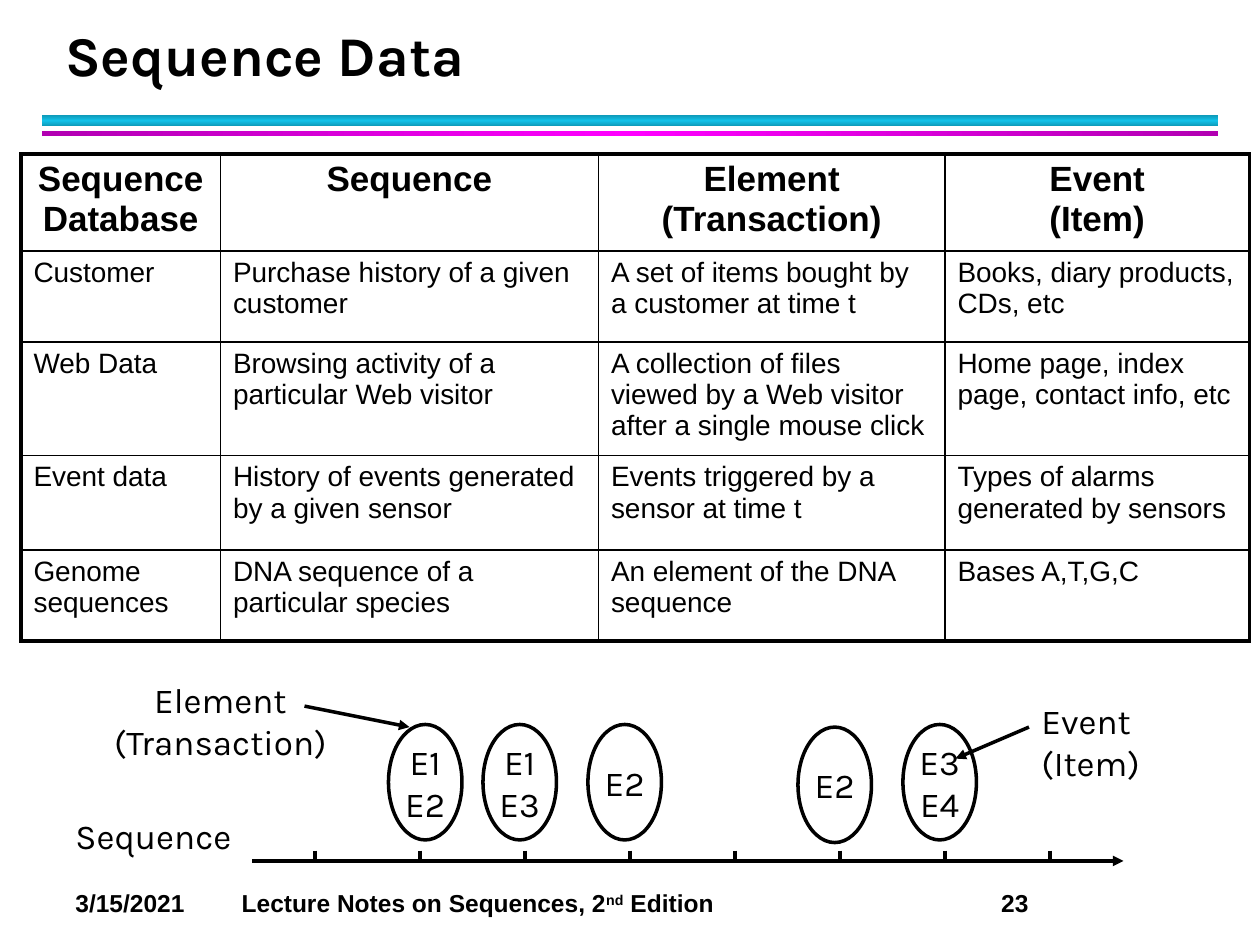
"""Builds the Sequence Data slide: a table of sequence databases above an event timeline."""
import copy
import dataclasses

import lxml.etree
import pptx
import pptx.dml.color
import pptx.enum.shapes
import pptx.enum.text
import pptx.oxml.ns
import pptx.util

Pt = pptx.util.Pt
qn = pptx.oxml.ns.qn
ALIGN = pptx.enum.text.PP_ALIGN
ANCHOR = pptx.enum.text.MSO_ANCHOR
SHAPE = pptx.enum.shapes.MSO_SHAPE


@dataclasses.dataclass(frozen=True)
class Theme:
    ink: str = "000000"
    blue: tuple = ("0E9BBA", "12C2E9", "0E9BBA")
    magenta: tuple = ("B200B2", "FF00FF", "B200B2")
    heading: str = "Karla"
    body: str = "Arial"
    title: float = 32
    label: float = 20
    cell: float = 16
    footer: float = 14
    stroke: float = 2
    frame: float = 2.25
    rule: float = 1


THEME = Theme()

TITLE = "Sequence Data"
HEADER = ["Sequence Database", "Sequence", "Element (Transaction)", "Event\v(Item)"]
DATABASES = [
    ["Customer", "Purchase history of a given customer",
     "A set of items bought by a customer at time t", "Books, diary products, CDs, etc"],
    ["Web Data", "Browsing activity of a particular Web visitor",
     "A collection of files viewed by a Web visitor after a single mouse click",
     "Home page, index page, contact info, etc"],
    ["Event data", "History of events generated by a given sensor",
     "Events triggered by a sensor at time t", "Types of alarms generated by sensors"],
    ["Genome sequences", "DNA sequence of a particular species",
     "An element of the DNA sequence", "Bases A,T,G,C"],
]
COLUMN_WIDTHS = [114, 216, 198, 174]
ROW_HEIGHTS = [55.5, 52, 64.5, 54, 52]
ELEMENTS = [("E1\vE2", 222, 414), ("E1\vE3", 276, 414), ("E2", 336, 414),
            ("E3\vE4", 516, 414), ("E2", 456, 415.5)]
LABELS = [("Sequence", (36, 462, 120, 31), ALIGN.LEFT),
          ("Element (Transaction)", (54, 384, 144, 55.5), ALIGN.CENTER),
          ("Event\v(Item)", (588, 396, 78, 55.5), ALIGN.LEFT)]
POINTERS = [((174, 403.5), (234, 415.5)), ((588, 415.5), (546, 433.5))]
AXIS_Y, AXIS_START, AXIS_END = 492, 144, 642
TICK_START, TICK_GAP, TICK_COUNT, TICK_HEIGHT = 180, 60, 8, 6
BANDS = [(66, 6, THEME.blue, 90), (75, 3, THEME.magenta, 0)]
FOOTER = ["3/15/2021\tLecture Notes on Sequences, 2", "nd", " Edition\t23"]
FOOTER_TABS = [95, 529]


def rgb(value):
    return pptx.dml.color.RGBColor.from_string(value)


def box(left, top, width, height):
    return Pt(left), Pt(top), Pt(width), Pt(height)


def write(frame, text, size=THEME.label, font=THEME.heading, bold=False,
          align=ALIGN.LEFT, anchor=None, wrap=True):
    """Fill the frame with one paragraph; a list gives separate runs."""
    if wrap is not None:
        frame.word_wrap = wrap
    if anchor is not None:
        frame.vertical_anchor = anchor
    paragraph = frame.paragraphs[0]
    paragraph.alignment = align
    if isinstance(text, str):
        paragraph.text = text
    else:
        for part in text:
            paragraph.add_run().text = part
    for run in paragraph.runs:
        run.font.name = font
        run.font.size = Pt(size)
        run.font.bold = bold
        run.font.color.rgb = rgb(THEME.ink)
    return paragraph


def draw_line(slide, start, end, arrow=False):
    line = slide.shapes.add_connector(
        pptx.enum.shapes.MSO_CONNECTOR.STRAIGHT, *box(*start, *end))
    line.line.color.rgb = rgb(THEME.ink)
    line.line.width = Pt(THEME.stroke)
    if arrow:
        lxml.etree.SubElement(line.line._get_or_add_ln(), qn("a:tailEnd"), type="triangle")
    lxml.etree.SubElement(line._element.spPr, qn("a:effectLst"))


def add_band(slide, top, height, colors, angle):
    band = slide.shapes.add_shape(SHAPE.RECTANGLE, *box(24, top, 672, height))
    band.shadow.inherit = False
    band.line.fill.background()
    band.fill.gradient()
    band.fill.gradient_angle = angle
    stop_list = band._element.spPr.find(".//" + qn("a:gsLst"))
    stop_list.append(copy.deepcopy(stop_list[0]))
    for index, (stop, color) in enumerate(zip(band.fill.gradient_stops, colors)):
        stop.position = index / 2
        stop.color.rgb = rgb(color)


def border(cell, widths):
    properties = cell._tc.get_or_add_tcPr()
    for side, width in widths.items():
        edge = lxml.etree.SubElement(properties, qn("a:ln" + side), w=str(Pt(width)))
        fill = lxml.etree.SubElement(edge, qn("a:solidFill"))
        lxml.etree.SubElement(fill, qn("a:srgbClr"), val=THEME.ink)


def add_databases(slide):
    rows = [HEADER] + DATABASES
    table = slide.shapes.add_table(
        len(rows), len(HEADER),
        *box(12, 88, sum(COLUMN_WIDTHS), sum(ROW_HEIGHTS))).table
    table.first_row = table.horz_banding = False
    for column, width in zip(table.columns, COLUMN_WIDTHS):
        column.width = Pt(width)
    last_row, last_column = len(rows) - 1, len(HEADER) - 1
    for r, (row, height) in enumerate(zip(rows, ROW_HEIGHTS)):
        table.rows[r].height = Pt(height)
        for c, entry in enumerate(row):
            cell = table.cell(r, c)
            outer = {"L": c == 0, "R": c == last_column, "T": r == 0, "B": r == last_row}
            border(cell, {side: THEME.frame if edge else THEME.rule
                          for side, edge in outer.items()})
            cell.fill.background()
            paragraph = write(cell.text_frame, entry, font=THEME.body, bold=r == 0,
                              size=THEME.label if r == 0 else THEME.cell,
                              align=ALIGN.CENTER if r == 0 else ALIGN.LEFT, wrap=None)
            paragraph.space_after = Pt(4)


def add_timeline(slide):
    draw_line(slide, (AXIS_START, AXIS_Y), (AXIS_END, AXIS_Y), arrow=True)
    for index in range(TICK_COUNT):
        x = TICK_START + index * TICK_GAP
        draw_line(slide, (x, AXIS_Y - TICK_HEIGHT), (x, AXIS_Y))
    for events, left, top in ELEMENTS:
        element = slide.shapes.add_shape(SHAPE.OVAL, *box(left, top, 42, 66))
        element.shadow.inherit = False
        element.fill.background()
        element.line.color.rgb = rgb(THEME.ink)
        element.line.width = Pt(THEME.stroke)
        write(element.text_frame, events, align=ALIGN.CENTER,
              anchor=ANCHOR.MIDDLE, wrap=False)
    for start, end in POINTERS:
        draw_line(slide, start, end, arrow=True)
    for label, place, align in LABELS:
        write(slide.shapes.add_textbox(*box(*place)).text_frame, label, align=align)


def add_footer(slide):
    footer = slide.shapes.add_textbox(*box(36, 504, 672, 24.5))
    paragraph = write(footer.text_frame, FOOTER, size=THEME.footer,
                      font=THEME.body, bold=True)
    paragraph.runs[1]._r.get_or_add_rPr().set("baseline", "30000")
    tabs = lxml.etree.SubElement(paragraph._p.get_or_add_pPr(), qn("a:tabLst"))
    for position in FOOTER_TABS:
        lxml.etree.SubElement(tabs, qn("a:tab"), pos=str(Pt(position)), algn="l")


def main():
    deck = pptx.Presentation()
    deck.slide_width, deck.slide_height = Pt(720), Pt(540)
    slide = deck.slides.add_slide(deck.slide_layouts[5])
    for band in BANDS:
        add_band(slide, *band)
    add_footer(slide)
    title = slide.shapes.title
    title.left, title.top, title.width, title.height = box(30, 12, 652, 42)
    title.text_frame.auto_size = pptx.enum.text.MSO_AUTO_SIZE.NONE
    write(title.text_frame, TITLE, size=THEME.title, bold=True,
          anchor=ANCHOR.BOTTOM).line_spacing = Pt(36)
    add_databases(slide)
    add_timeline(slide)
    deck.save("out.pptx")


if __name__ == "__main__":
    main()
